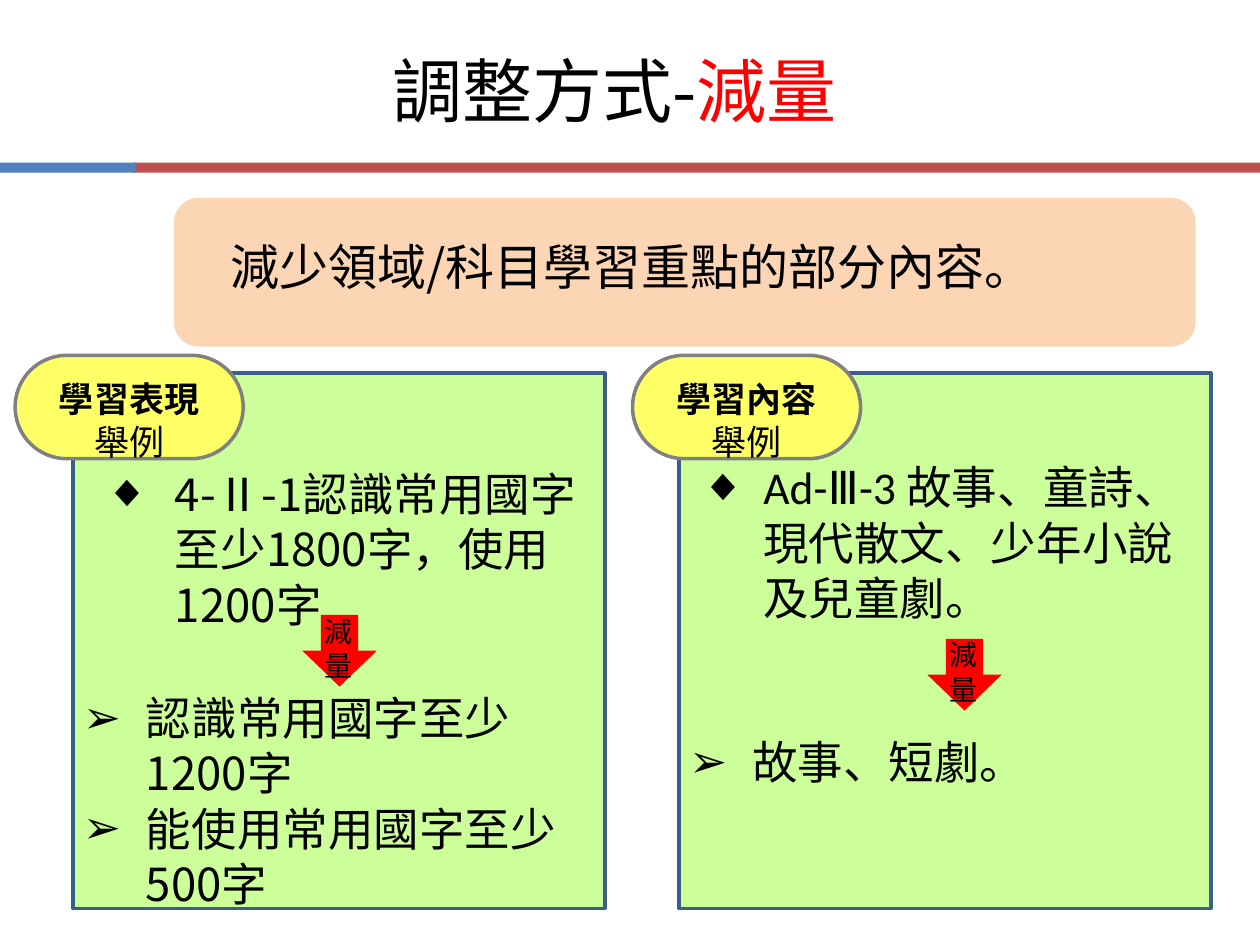
"""Build the slide on reducing learning content, with two example panels."""
from lxml import etree
from pptx import Presentation
from pptx.dml.color import RGBColor
from pptx.enum import shapes, text
from pptx.oxml.ns import qn
from pptx.util import Inches, Pt

THEME = {
    "cjk": "Noto Sans CJK SC", "latin": "Calibri", "leading": 1.22,
    "title": 40, "lead": 28, "body": 26, "pill": 20, "arrow": 16,
    "black": "000000", "red": "FF0000", "bar": "C0504D", "accent": "4F81BD",
    "banner": "FCD5B5", "panel": "CCFF99", "panel_line": "3A5F8C",
    "label": "FFFF66", "label_line": "808080",
}
TITLE = [("調整方式-", "black", False), ("減量", "red", False)]
LEAD = "減少領域/科目學習重點的部分內容。"
REDUCE = "減量"
EXAMPLE = "舉例"
PANELS = [
    {"left": 0.58, "pill_left": 0.12, "label": "學習表現",
     "before": ["4-Ⅱ-1認識常用國字至少1800字，使用1200字"],
     "before_at": (0.73, 3.64, 4.18, 1.72), "before_indent": (0.56, -0.56),
     "arrow_at": (2.4, 4.88),
     "after": ["認識常用國字至少1200字", "能使用常用國字至少500字"],
     "after_at": (0.12, 5.42, 4.69, 2.15), "font": "cjk"},
    {"left": 5.39, "pill_left": 5.02, "label": "學習內容",
     "before": ["Ad-Ⅲ-3 故事、童詩、現代散文、少年小說及兒童劇。"],
     "before_at": (5.02, 3.59, 4.71, 1.72), "before_indent": (0.94, -0.5),
     "arrow_at": (7.36, 5.07),
     "after": ["故事、短劇。"],
     "after_at": (4.93, 5.77, 4.69, 0.84), "font": "latin"},
]
AFTER_INDENT = (0.94, -0.5)
SHAPE = shapes.MSO_SHAPE
CENTER = text.PP_ALIGN.CENTER
LEFT = text.PP_ALIGN.LEFT


def color(name):
    return RGBColor.from_string(THEME[name])


def add_shape(s, kind, at, fill, line=None):
    sp = s.shapes.add_shape(kind, *map(Inches, at))
    sp.shadow.inherit = False
    sp.fill.solid()
    sp.fill.fore_color.rgb = color(fill)
    if line:
        sp.line.color.rgb = color(line)
        sp.line.width = Pt(2)
    else:
        sp.line.fill.background()
    return sp


def add_bullet(p, char, indent):
    p.level = 1
    pPr = p._p.get_or_add_pPr()
    for key, value in zip(("marL", "indent"), indent):
        pPr.set(key, str(Inches(value)))
    etree.SubElement(pPr, qn("a:buFont")).set("typeface", "Wingdings" if char is None else "Arial")
    etree.SubElement(pPr, qn("a:buChar")).set("char", char)


def write(tf, paragraphs, size, align=LEFT, font="cjk", bullet=None, indent=None):
    tf.word_wrap = True
    tf.vertical_anchor = text.MSO_ANCHOR.TOP
    for i, runs in enumerate(paragraphs):
        p = tf.add_paragraph() if i else tf.paragraphs[0]
        p.alignment = align
        p.line_spacing = Pt(round(THEME[size] * THEME["leading"], 1))
        if bullet:
            add_bullet(p, bullet, indent)
        for words, ink, bold in runs:
            r = p.add_run()
            r.text = words
            r.font.size = Pt(THEME[size])
            r.font.bold = bold
            r.font.name = THEME[font]
            r.font.color.rgb = color(ink)
            etree.SubElement(r._r.get_or_add_rPr(), qn("a:ea")).set("typeface", THEME["cjk"])


def add_text(s, at, paragraphs, size, **style):
    tf = s.shapes.add_textbox(*map(Inches, at)).text_frame
    write(tf, paragraphs, size, **style)
    tf.auto_size = text.MSO_AUTO_SIZE.SHAPE_TO_FIT_TEXT


def plain(lines):
    return [[(line, "black", False)] for line in lines]


def add_panel(s, panel):
    add_shape(s, SHAPE.RECTANGLE, (panel["left"], 2.96, 4.22, 4.25), "panel", "panel_line")
    pill = add_shape(s, SHAPE.ROUNDED_RECTANGLE, (panel["pill_left"], 2.82, 1.81, 0.82),
                     "label", "label_line")
    pill.adjustments[0] = 0.5
    write(pill.text_frame, [[(panel["label"], "black", True)], *plain([EXAMPLE])],
          "pill", align=CENTER)


def add_example(s, panel):
    add_text(s, panel["before_at"], plain(panel["before"]), "body", font=panel["font"],
             bullet="◆", indent=panel["before_indent"])
    x, y = panel["arrow_at"]
    add_shape(s, SHAPE.DOWN_ARROW, (x, y, 0.59, 0.57), "red")
    add_text(s, (x + 0.08, y - 0.06, 0.35, 0.64), plain([REDUCE]), "arrow")
    add_text(s, panel["after_at"], plain(panel["after"]), "body", font=panel["font"],
             bullet="➢", indent=AFTER_INDENT)


def main():
    prs = Presentation()
    prs.slide_width, prs.slide_height = Inches(10), Inches(7.5)
    s = prs.slides.add_slide(prs.slide_layouts[6])
    add_shape(s, SHAPE.RECTANGLE, (1.06, 1.29, 8.94, 0.08), "bar")
    add_shape(s, SHAPE.RECTANGLE, (0, 1.29, 1.08, 0.08), "accent")
    add_text(s, (-0.12, 0.32, 10, 0.77), [TITLE], "title", align=CENTER)
    add_shape(s, SHAPE.ROUNDED_RECTANGLE, (1.38, 1.57, 8.11, 1.18), "banner")
    add_text(s, (1.09, 1.82, 7.85, 0.57), plain([LEAD]), "lead", align=CENTER)
    for draw in (add_panel, add_example):
        for panel in PANELS:
            draw(s, panel)
    prs.save("out.pptx")


if __name__ == "__main__":
    main()
